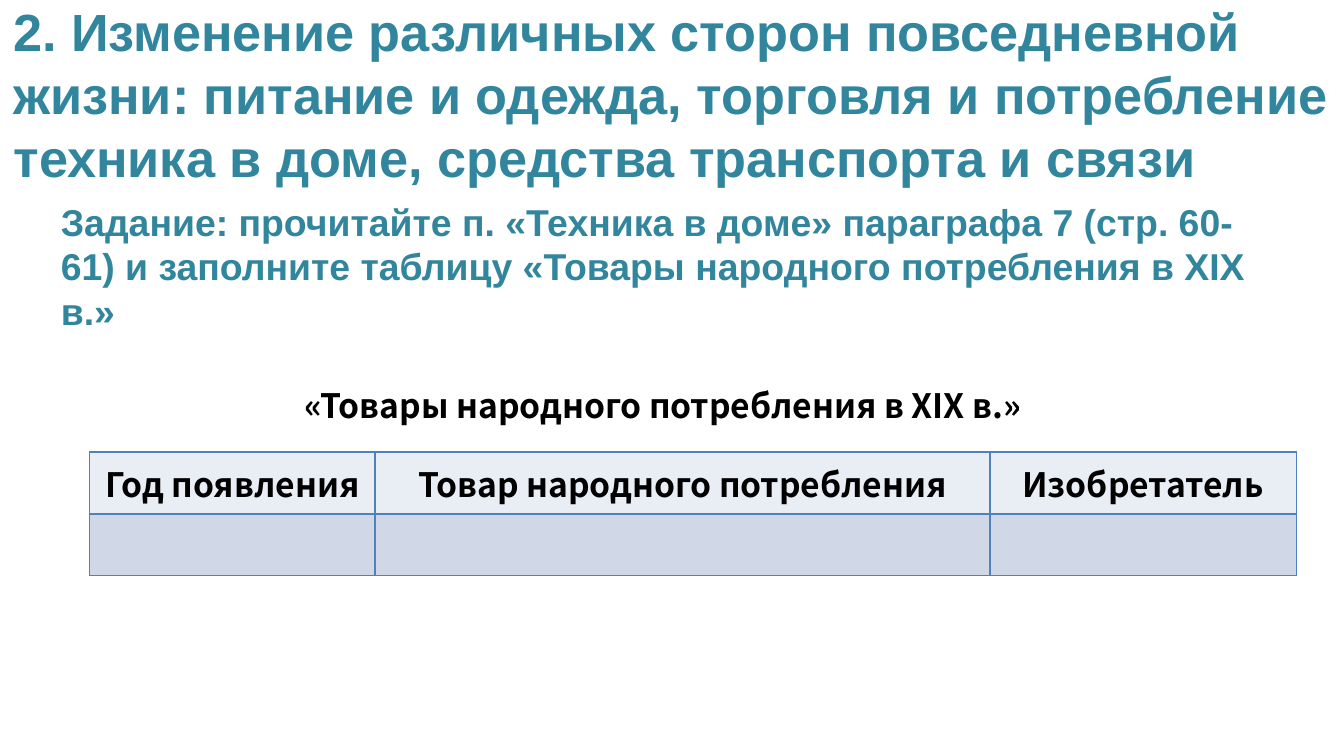
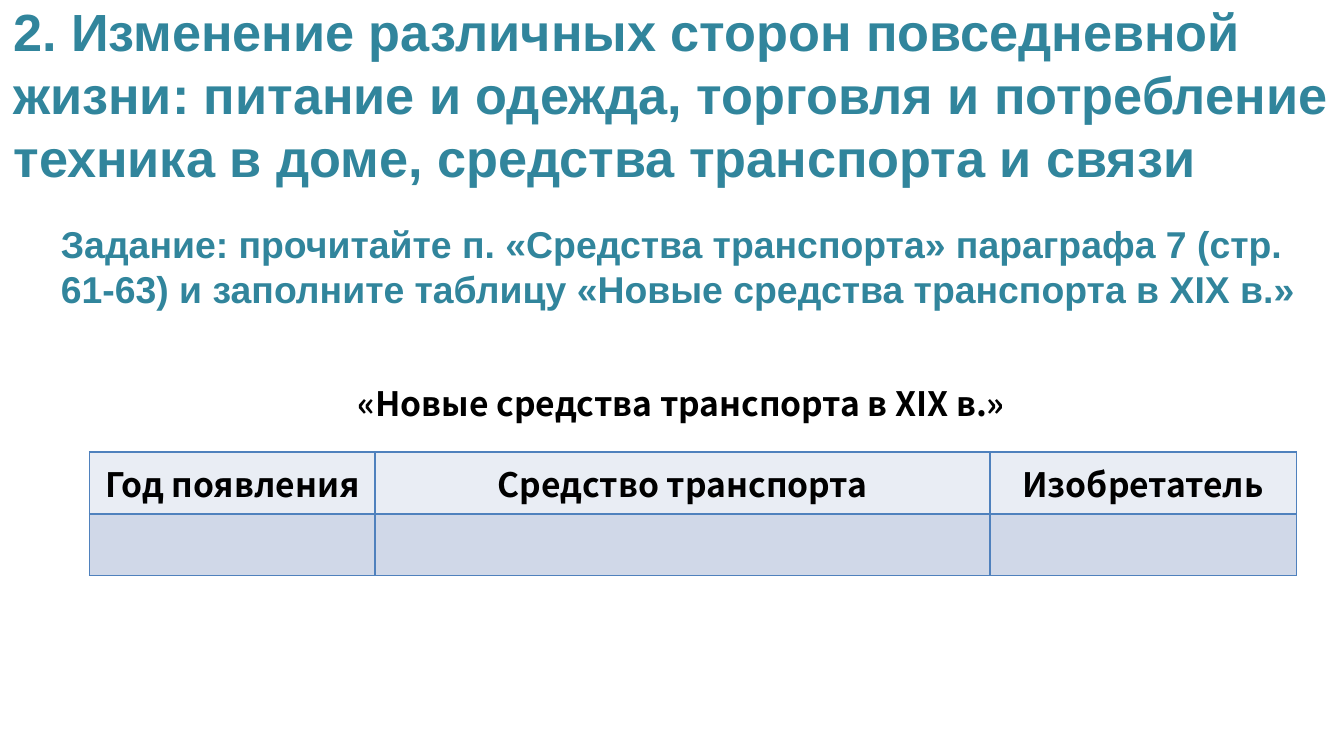
from lxml import etree
from pptx import Presentation
from pptx.dml.color import RGBColor
from pptx.enum.text import MSO_ANCHOR, MSO_AUTO_SIZE, PP_ALIGN
from pptx.oxml.ns import qn
from pptx.util import Pt

PX = 9525
LEFT, CENTER = PP_ALIGN.LEFT, PP_ALIGN.CENTER
TOP, MIDDLE = MSO_ANCHOR.TOP, MSO_ANCHOR.MIDDLE
FIXED = MSO_AUTO_SIZE.NONE
TEAL, BLACK, BLUE = "31859C", "000000", "4F81BD"
HEAD, BODY = "E9EDF4", "D0D8E8"
SANS, NOTO = "Arial", "Noto Sans CJK KR"
WIDE, HIGH = 960, 540
COLS, ROW = (204, 439, 219), 44
TITLE = ("2. Изменение различных сторон повседневной жизни: питание и одежда, "
         "торговля и потребление техника в доме, средства транспорта и связи")
TASKS = [
    {"task": "Задание: прочитайте п. «Техника в доме» параграфа 7 (стр. 60-61) "
             "и заполните таблицу «Товары народного потребления в XIX в.»",
     "span": 892, "name": "«Товары народного потребления в XIX в.»",
     "spot": (208, 270, 611, 38), "item": "Товар народного потребления"},
    {"task": "Задание: прочитайте п. «Средства транспорта» параграфа 7 (стр. 61-63) "
             "и заполните таблицу «Новые средства транспорта в XIX в.»",
     "span": 915, "name": "«Новые средства транспорта в XIX в.»",
     "spot": (246, 269, 499, 38), "item": "Средство транспорта"},
]


def px(n):
    """Turn px into EMU."""
    return int(n * PX)


def tint(code):
    """Turn a hex string into a colour."""
    return RGBColor.from_string(code)


def write(frame, text, size=18, font=NOTO, color=BLACK, align=LEFT):
    """Put one bold paragraph into a text frame."""
    frame.word_wrap = True
    para = frame.paragraphs[0]
    para.alignment = align
    run = para.add_run()
    run.text = text
    run.font.size = Pt(size)
    run.font.name = font
    run.font.bold = True
    run.font.color.rgb = tint(color)


def head(slide, box):
    """Move and format the title placeholder."""
    title = slide.shapes.title
    title.left, title.top, title.width, title.height = map(px, box)
    frame = title.text_frame
    frame.auto_size = FIXED
    frame.vertical_anchor = MIDDLE
    write(frame, TITLE, size=28, font=SANS, color=TEAL)


def label(slide, box, text, anchor=TOP, **form):
    """Add a text box."""
    frame = slide.shapes.add_textbox(*map(px, box)).text_frame
    frame.vertical_anchor = anchor
    write(frame, text, **form)


def edge(cell):
    """Draw the four borders of a cell."""
    props = cell._tc.get_or_add_tcPr()
    for tag in ("a:lnL", "a:lnR", "a:lnT", "a:lnB"):
        line = etree.SubElement(props, qn(tag), w=str(Pt(1)))
        fill = etree.SubElement(line, qn("a:solidFill"))
        etree.SubElement(fill, qn("a:srgbClr"), val=BLUE)


def grid(slide, left, top, names):
    """Add a table with a header row and a row to fill in."""
    size = map(px, (left, top, sum(COLS), 2 * ROW))
    table = slide.shapes.add_table(2, len(COLS), *size).table
    table.first_row = table.horz_banding = False
    for col, width in zip(table.columns, COLS):
        col.width = px(width)
    for row, color in zip(table.rows, (HEAD, BODY)):
        row.height = px(ROW)
        for cell in row.cells:
            edge(cell)
            cell.fill.solid()
            cell.fill.fore_color.rgb = tint(color)
    for cell, name in zip(table.rows[0].cells, names):
        write(cell.text_frame, name, align=CENTER)


def page(deck, data):
    """Build one task slide."""
    slide = deck.slides.add_slide(deck.slide_layouts[5])
    label(slide, (34, 156, data["span"], 68), data["task"], anchor=MIDDLE,
          size=20, font=SANS, color=TEAL)
    head(slide, (0, 0, WIDE, 134))
    grid(slide, 64, 323, ("Год появления", data["item"], "Изобретатель"))
    label(slide, data["spot"], data["name"])


def main():
    """Build and save the deck."""
    deck = Presentation()
    deck.slide_width, deck.slide_height = px(WIDE), px(HIGH)
    for data in TASKS:
        page(deck, data)
    deck.save("out.pptx")


if __name__ == "__main__":
    main()
